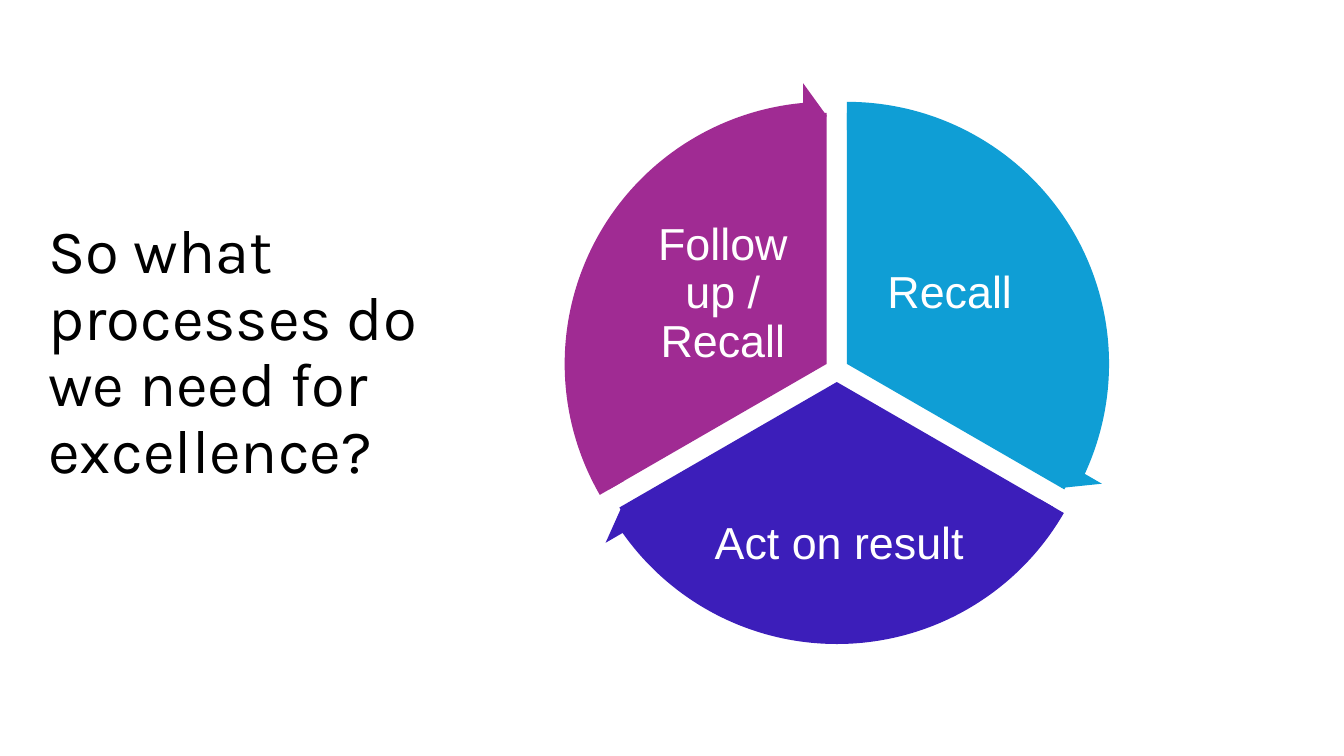
from dataclasses import dataclass

from pptx import Presentation
from pptx.dml.color import RGBColor
from pptx.enum import shapes, text
from pptx.util import Inches, Pt


@dataclass(frozen=True)
class Theme:
    title_font: str = "Karla"
    label_font: str = "Arial"
    title_size: int = 44
    label_size: int = 32
    ink: str = "000000"
    label_ink: str = "FFFFFF"
    recall: str = "0F9ED5"
    act: str = "3C1EBA"
    follow_up: str = "A02B93"


@dataclass(frozen=True)
class Stage:
    label: str
    color: str
    start: int  # degrees clockwise from three o'clock
    shift: tuple[float, float]  # outward move from the wheel's corner
    label_box: tuple[float, float, float, float]
    label_top_inset: float = 0.04


THEME = Theme()
STAGES = (
    Stage("Recall", THEME.recall, 270, (0.1, 0), (8.53, 2.18, 1.78, 1.48)),
    Stage("Act on result", THEME.act, 30, (0, 0.18), (6.99, 4.53, 2.67, 1.3), 0.5),
    Stage("Follow up / Recall", THEME.follow_up, 150, (-0.1, 0), (6.28, 2.18, 1.78, 1.48)),
)

# Wheel geometry in inches; shape angles count 0.6 units per degree
WHEEL_LEFT, WHEEL_TOP, WHEEL_SIZE = 5.81, 1.12, 4.98
ARROW_MARGIN = 0.305
UNITS_PER_DEGREE = 0.6
SWEEP = 360 // len(STAGES)
ARROW_WIDTH, ARROW_HEAD, ARROW_HEAD_ANGLE = 0.05, 0.06, 3.28


def write(frame, wording: str, font: str, size: int, color: str,
          align: text.PP_ALIGN, inset: float, top_inset: float) -> None:
    frame.word_wrap = True
    frame.auto_size = text.MSO_AUTO_SIZE.NONE
    frame.vertical_anchor = text.MSO_ANCHOR.MIDDLE
    frame.margin_left = frame.margin_right = frame.margin_bottom = Inches(inset)
    frame.margin_top = Inches(top_inset)
    paragraph = frame.paragraphs[0]
    paragraph.alignment = align
    paragraph.line_spacing = 0.9
    run = paragraph.add_run()
    run.text = wording
    run.font.name = font
    run.font.size = Pt(size)
    run.font.color.rgb = RGBColor.from_string(color)


def draw_sector(slide, kind: shapes.MSO_SHAPE, stage: Stage, margin: float,
                adjustments: tuple[float, ...]) -> None:
    left = WHEEL_LEFT + stage.shift[0] - margin
    top = WHEEL_TOP + stage.shift[1] - margin
    size = Inches(WHEEL_SIZE + 2 * margin)
    sector = slide.shapes.add_shape(kind, Inches(left), Inches(top), size, size)
    for index, value in enumerate(adjustments):
        sector.adjustments[index] = value
    sector.shadow.inherit = False
    sector.fill.solid()
    sector.fill.fore_color.rgb = RGBColor.from_string(stage.color)
    sector.line.fill.background()


def draw_wedge(slide, stage: Stage) -> None:
    start = stage.start * UNITS_PER_DEGREE
    end = (stage.start + SWEEP) % 360 * UNITS_PER_DEGREE
    draw_sector(slide, shapes.MSO_SHAPE.PIE, stage, 0, (start, end))
    label = slide.shapes.add_textbox(*map(Inches, stage.label_box))
    write(label.text_frame, stage.label, THEME.label_font, THEME.label_size,
          THEME.label_ink, text.PP_ALIGN.CENTER, 0.04, stage.label_top_inset)


def draw_arrow(slide, stage: Stage) -> None:
    start = stage.start * UNITS_PER_DEGREE
    end = (stage.start + SWEEP) % 360 * UNITS_PER_DEGREE
    draw_sector(slide, shapes.MSO_SHAPE.CIRCULAR_ARROW, stage, ARROW_MARGIN,
                (ARROW_WIDTH, ARROW_HEAD_ANGLE, end - ARROW_HEAD_ANGLE, start, ARROW_HEAD))


def main() -> None:
    deck = Presentation()
    deck.slide_width, deck.slide_height = Inches(13.33), Inches(7.5)
    slide = deck.slides.add_slide(deck.slide_layouts[5])

    # Question on the left
    question = slide.shapes.title
    question.left, question.top = Inches(0.43), Inches(0.74)
    question.width, question.height = Inches(3.91), Inches(5.53)
    write(question.text_frame, "So what processes do we need for excellence?",
          THEME.title_font, THEME.title_size, THEME.ink, text.PP_ALIGN.LEFT, 0.05, 0.05)

    # Process wheel: wedges first, arrows over them
    for stage in STAGES:
        draw_wedge(slide, stage)
    for stage in STAGES:
        draw_arrow(slide, stage)

    deck.save("out.pptx")


if __name__ == "__main__":
    main()
